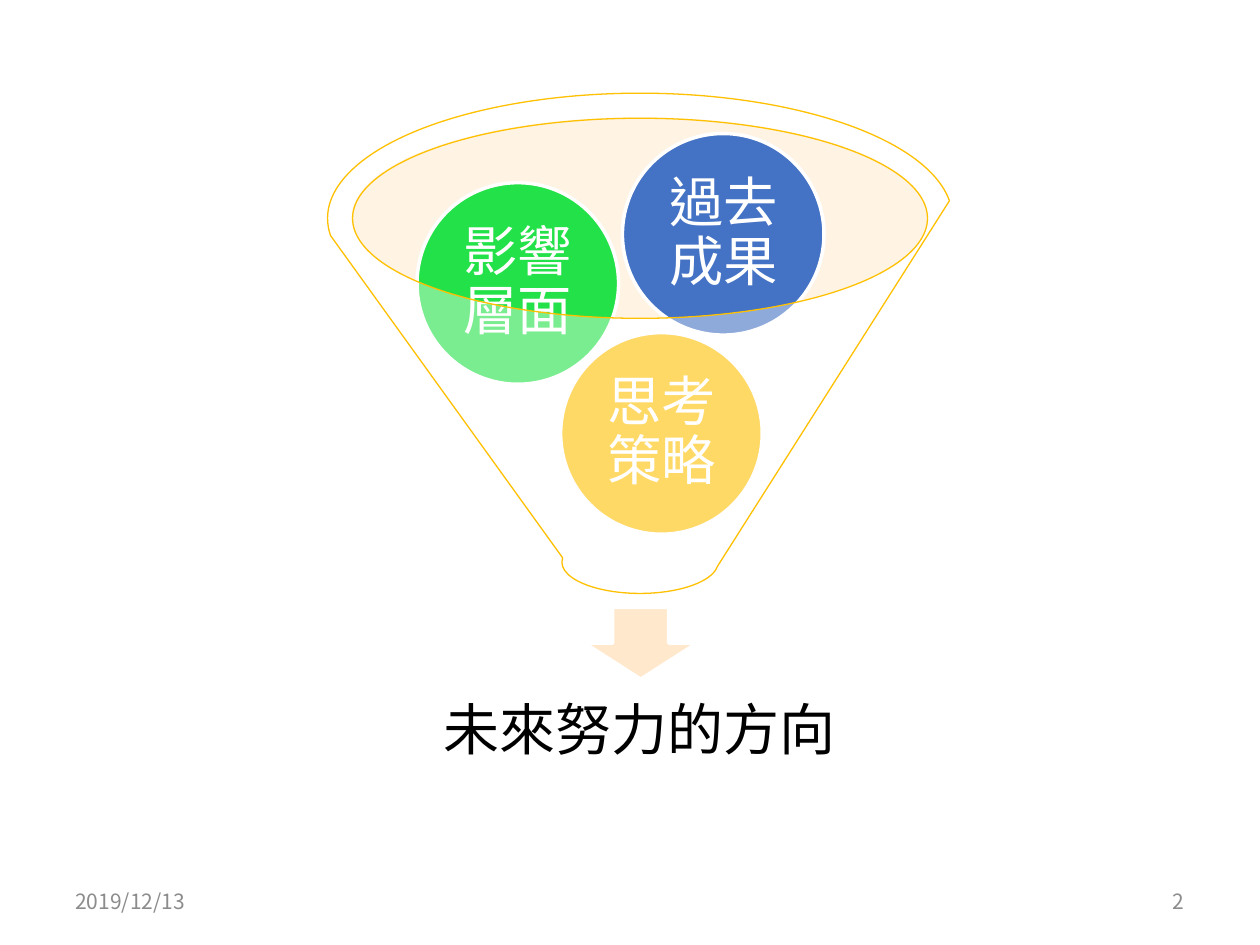
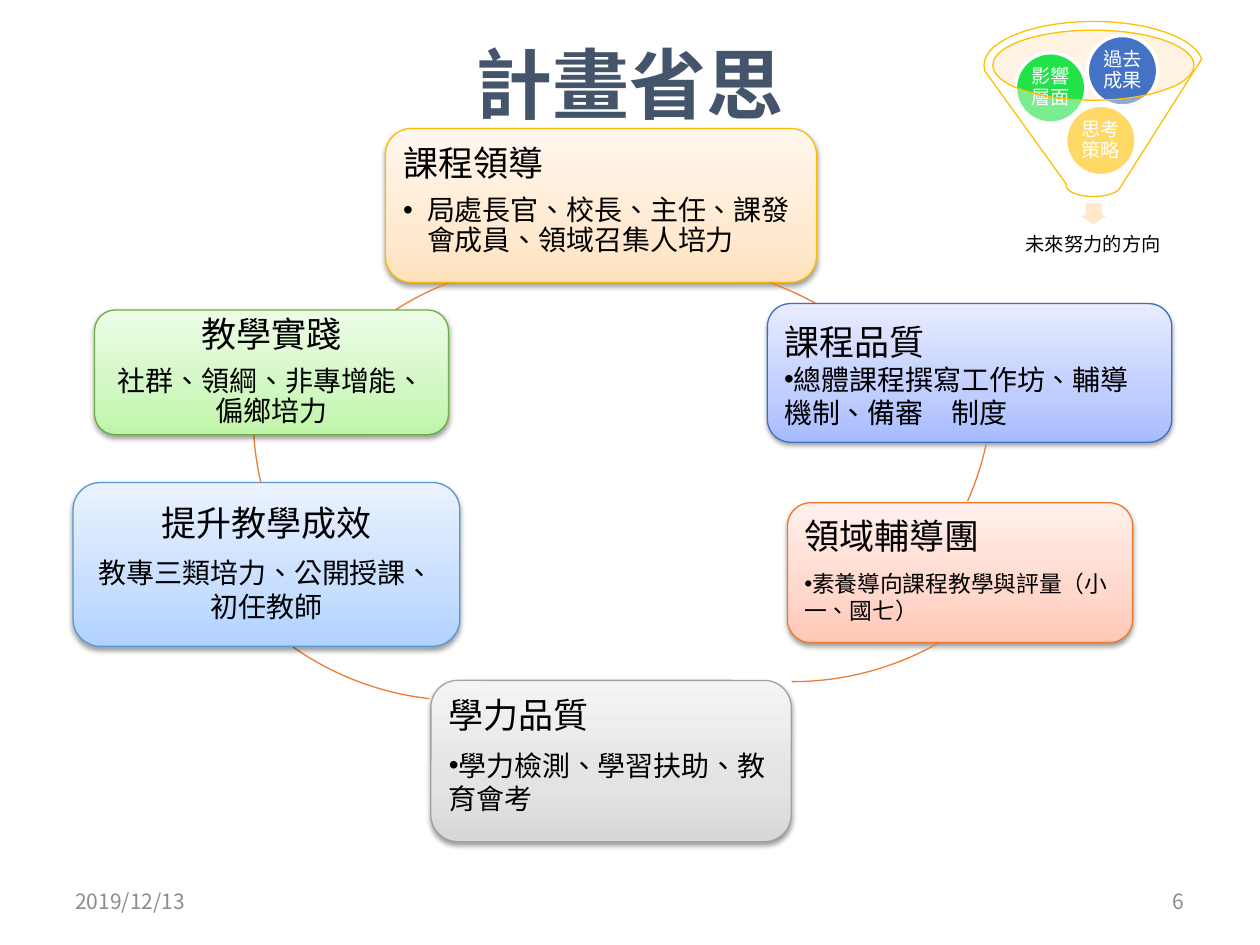
from dataclasses import dataclass
from lxml.etree import SubElement as Sub
from pptx import Presentation
from pptx.dml.color import RGBColor as Rgb
from pptx.enum.shapes import MSO_SHAPE as Kind
from pptx.enum.text import MSO_ANCHOR as Anchor, PP_ALIGN as Align
from pptx.oxml.ns import qn
from pptx.util import Inches, Pt


@dataclass(frozen=True)
class Theme:
    cols: int = 100
    rows: int = 75
    latin: str = "Calibri"
    asian: str = "Noto Sans CJK SC"
    lang: str = "zh-TW"
    ink: str = "000000"
    white: str = "FFFFFF"
    gray: str = "8C8C8C"
    navy: str = "44546A"
    gold: str = "FFC000"
    green: str = "23E148"
    blue: str = "4472C4"
    cream: str = "FFE2BD"
    peach: str = "FFE8CC"
    orange: str = "ED7D31"
    title: int = 44
    goal: int = 32
    ball: int = 31
    head: int = 20
    body: int = 16
    small: int = 13
    foot: int = 12
    thin: float = 0.75
    thick: float = 2
    tight: float = 0.9
    after: float = 0.35


@dataclass(frozen=True)
class Card:
    box: tuple
    edge: str
    shades: tuple
    head: str
    body: str
    size: int = Theme.body
    mid: bool = False
    dot: bool = True
    hang: float = 0
    lead: tuple = (Theme.tight, Theme.after)
    rest: tuple = (None, 0)


DATE = "2019/12/13"
GOAL = "未來努力的方向"
BALLS = [
    (18.5, 19, Theme.gold, "思考策略"),
    (7.1, 7.1, Theme.green, "影響層面"),
    (23.4, 3.2, Theme.blue, "過去成果"),
]
CARDS = [
    Card((30.6, 10.2, 34.2, 12.2), "F9BC00", ("FFE2BD", "FFEAD1", "FFF7EE"),
         "課程領導", "局處長官、校長、主任、課發會成員、領域召集人培力",
         hang=1.9, rest=(Theme.tight, 0.15)),
    Card((60.9, 24.1, 32.1, 11), "3F6FC3", ("A6BBFF", "C0CEFF", "E7ECFF"),
         "課程品質", "總體課程撰寫工作坊、輔導機制、備審　制度", lead=(None, 0)),
    Card((62.5, 39.9, 27.4, 11.1), "EC792B", ("FFC7B6", "FFD7CB", "FFF0EB"),
         "領域輔導團", "素養導向課程教學與評量（小一、國七）", size=Theme.small),
    Card((34.2, 54, 28.6, 12.8), "A1A1A1", ("D8D8D8", "E3E3E3", "F4F4F4"),
         "學力品質", "學力檢測、學習扶助、教育會考"),
    Card((5.8, 38.3, 30.7, 13), "5698D3", ("B0D2FF", "C7DEFF", "EAF2FF"),
         "提升教學成效", "教專三類培力、公開授課、初任教師", mid=True, dot=False),
    Card((7.5, 24.6, 28.1, 9.9), "6DAC43", ("BEF5A7", "D1F7C2", "EDFDE7"),
         "教學實踐", "社群、領綱、非專增能、偏鄉培力", mid=True, dot=False,
         rest=(Theme.tight, Theme.after)),
]
RING = 46.8
ARCS = [
    (29.9, 21.1, 289.4, 299.2),
    (32, 6.9, 12.1, 23.9),
    (39.5, 7.3, 60.5, 90.2),
    (13.3, 8.8, 96.4, 125.1),
    (20.1, 9.6, 166.9, 176.3),
    (20.6, 20.9, 237.4, 249),
]


class Deck:
    def __init__(self, theme):
        self.theme = theme
        self.prs = Presentation()
        self.prs.slide_width = Inches(10)
        self.prs.slide_height = Inches(7.5)
        self.slide = None

    def place(self, x, y, w, h):
        col = self.prs.slide_width / self.theme.cols
        row = self.prs.slide_height / self.theme.rows
        return round(x * col), round(y * row), round(w * col), round(h * row)

    def page(self, num, title=None):
        t = self.theme
        self.slide = self.prs.slides.add_slide(self.prs.slide_layouts[5 if title else 6])
        for x, text, align in ((5, DATE, Align.LEFT), (71.7, str(num), Align.RIGHT)):
            frame = self.label((x, 69.5, 23.3, 4), (1, 0.5))
            self.put(frame.paragraphs[0], text, t.foot, t.gray, align, face=t.asian)
        if title:
            head = self.slide.shapes.title
            head.left, head.top, head.width, head.height = self.place(5, 0.3, 90, 12.5)
            self.frame(head, Anchor.MIDDLE, (1, 0.5))
            self.put(head.text_frame.paragraphs[0], title, t.title, t.navy,
                     Align.CENTER, face=t.asian, bold=True)

    def frame(self, shape, anchor, pad):
        frame = shape.text_frame
        frame.word_wrap = True
        frame.vertical_anchor = anchor
        side, edge = self.place(*pad, 0, 0)[:2]
        frame.margin_left = frame.margin_right = side
        frame.margin_top = frame.margin_bottom = edge
        return frame

    def label(self, box, pad):
        shape = self.slide.shapes.add_textbox(*self.place(*box))
        return self.frame(shape, Anchor.MIDDLE, pad)

    def put(self, para, text, size, color, align, gap=(None, 0), face=None, bold=False):
        para.alignment = align
        para.line_spacing, after = gap
        para.space_after = Pt(round(after * size, 1))
        run = para.add_run()
        run.text = text
        font = run.font
        font.size, font.bold = Pt(size), bold
        font.color.rgb = Rgb.from_string(color)
        font.name = face or self.theme.latin
        prop = run._r.get_or_add_rPr()
        prop.set("lang", self.theme.lang)
        Sub(prop, qn("a:ea"), typeface=self.theme.asian)

    def bullet(self, para, hang):
        prop = para._p.get_or_add_pPr()
        left = self.place(hang, 0, 0, 0)[0]
        prop.set("marL", str(left))
        prop.set("indent", str(-left))
        Sub(prop, qn("a:buFont"), typeface="Arial")
        Sub(prop, qn("a:buChar"), char="•")

    def shape(self, kind, box, fill=None, line=None, width=0, alpha=None):
        item = self.slide.shapes.add_shape(kind, *self.place(*box))
        item.shadow.inherit = False
        if fill:
            item.fill.solid()
            item.fill.fore_color.rgb = Rgb.from_string(fill)
        else:
            item.fill.background()
        if alpha:
            tint = item._element.spPr.find(qn("a:solidFill"))[0]
            Sub(tint, qn("a:alpha"), val=str(alpha * 1000))
        if line:
            item.line.color.rgb = Rgb.from_string(line)
            item.line.width = Pt(width)
        else:
            item.line.fill.background()
        return item

    def blend(self, item, shades):
        item.fill.gradient()
        item.fill.gradient_angle = 90
        stops = item._element.spPr.find(qn("a:gradFill")).find(qn("a:gsLst"))
        for stop in list(stops):
            stops.remove(stop)
        for pos, shade in zip((0, 35, 100), shades):
            stop = Sub(stops, qn("a:gs"), pos=str(pos * 1000))
            Sub(stop, qn("a:srgbClr"), val=shade)

    def shade(self, item):
        glow = Sub(item._element.spPr.find(qn("a:effectLst")), qn("a:outerShdw"),
                   blurRad=str(Pt(3.1)), dist=str(Pt(1.6)), dir="5400000", rotWithShape="0")
        tint = Sub(glow, qn("a:srgbClr"), val=self.theme.ink)
        Sub(tint, qn("a:alpha"), val="38000")

    def card(self, card):
        t = self.theme
        item = self.shape(Kind.ROUNDED_RECTANGLE, card.box, t.white, card.edge, t.thin)
        self.blend(item, card.shades)
        self.shade(item)
        frame = self.frame(item, Anchor.MIDDLE if card.mid else Anchor.TOP, (0.8, 0.8))
        align = Align.CENTER if card.mid else Align.LEFT
        self.put(frame.paragraphs[0], card.head, t.head, t.ink, align, card.lead)
        para = frame.add_paragraph()
        para.line_spacing, para.space_after = card.rest[0], Pt(0)
        if card.dot:
            self.bullet(para, card.hang)
        self.put(para, card.body, card.size, t.ink, align, card.rest)

    def arc(self, x, y, start, end):
        item = self.shape(Kind.ARC, (x, y, RING, RING), None, self.theme.orange, self.theme.thin)
        for i, turn in enumerate((start, end)):
            item.adjustments[i] = turn * 0.6

    def funnel(self, left, top, scale=1):
        t = self.theme
        gap = (t.tight, t.after)

        def fit(x, y, w, h):
            return left + x * scale, top + y * scale, w * scale, h * scale

        self.shape(Kind.OVAL, fit(1.9, 1.9, 45.7, 15.9), t.cream, alpha=40)
        self.shape(Kind.DOWN_ARROW, fit(20.4, 40.8, 8.9, 5.7), t.peach, t.white, t.thick)
        frame = self.label(fit(3.5, 45.4, 42.5, 10.6), (2.5 * scale, 2.5 * scale))
        self.put(frame.paragraphs[0], GOAL, round(t.goal * scale), t.ink, Align.CENTER, gap)
        for x, y, fill, text in BALLS:
            ball = self.shape(Kind.OVAL, fit(x, y, 16, 16), fill, t.white, t.thick)
            frame = self.frame(ball, Anchor.MIDDLE, (0.4 * scale, 0.4 * scale))
            self.put(frame.paragraphs[0], text, round(t.ball * scale), t.white,
                     Align.CENTER, gap)
        self.shape(Kind.FUNNEL, fit(0, 0, 49.6, 39.7), t.white, t.gold, t.thin, 40)


def main():
    deck = Deck(Theme())
    deck.page(2)
    deck.funnel(26, 7.4)
    deck.page(6, "計畫省思")
    for card, arc in zip(CARDS, ARCS):
        deck.card(card)
        deck.arc(*arc)
    deck.funnel(78.1, 1.7, 0.35)
    deck.prs.save("out.pptx")


if __name__ == "__main__":
    main()
